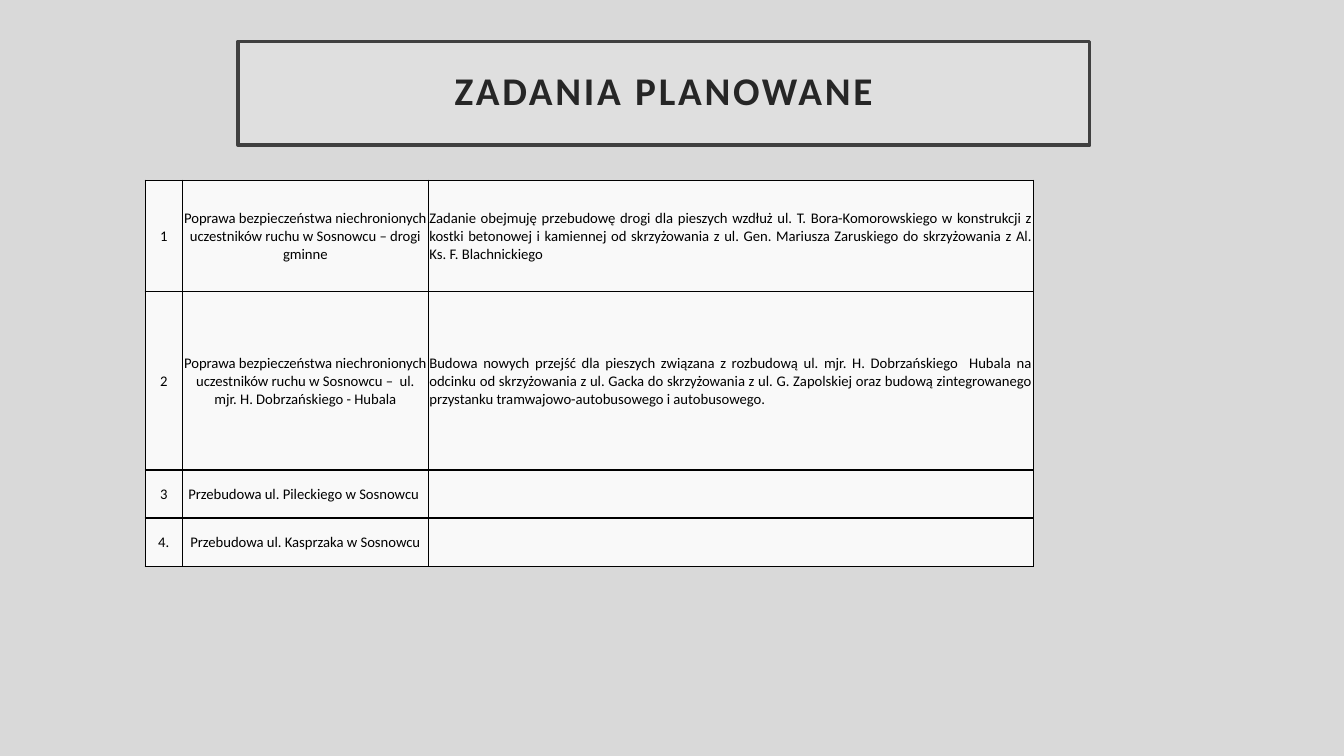
from lxml.etree import SubElement
from pptx import Presentation
from pptx.dml.color import RGBColor
from pptx.enum.text import MSO_ANCHOR as Anchor, MSO_AUTO_SIZE as AutoSize, PP_ALIGN as Align
from pptx.oxml.ns import qn
from pptx.util import Pt

TITLE = "ZADANIA PLANOWANE"
TASKS = [
    ("1", "Poprawa bezpieczeństwa niechronionych uczestników ruchu w Sosnowcu – drogi gminne",
     "Zadanie obejmuję przebudowę drogi dla pieszych wzdłuż ul. T. Bora-Komorowskiego "
     "w konstrukcji z kostki betonowej i kamiennej od skrzyżowania z ul. Gen. Mariusza "
     "Zaruskiego do skrzyżowania z Al. Ks. F. Blachnickiego "),
    ("2", "Poprawa bezpieczeństwa niechronionych uczestników ruchu w Sosnowcu –  ul. mjr. "
     "H. Dobrzańskiego - Hubala",
     "Budowa nowych przejść dla pieszych związana z rozbudową ul. mjr. H. Dobrzańskiego  "
     "Hubala na odcinku od skrzyżowania z ul. Gacka do skrzyżowania z ul. G. Zapolskiej "
     "oraz budową zintegrowanego przystanku tramwajowo-autobusowego i autobusowego."),
    ("3", "Przebudowa ul. Pileckiego w Sosnowcu ", ""),
    ("4.", "Przebudowa ul. Kasprzaka w Sosnowcu", ""),
]
COLUMN_WIDTHS = (26.6, 175.7, 432.1)
COLUMN_ALIGNS = (Align.CENTER, Align.CENTER, Align.JUSTIFY)
ROW_HEIGHTS = (79.5, 127.5, 34.3, 34.3)
TABLE_LEFT, TABLE_TOP = 103.7, 128.8

FONT = "Calibri"
BACKGROUND = RGBColor(0xD9, 0xD9, 0xD9)
TITLE_FILL = RGBColor(0xDF, 0xDF, 0xDF)
TITLE_LINE = RGBColor(0x40, 0x40, 0x40)
TITLE_TEXT = RGBColor(0x26, 0x26, 0x26)
CELL_FILL = RGBColor(0xF9, 0xF9, 0xF9)
BLACK = RGBColor(0, 0, 0)


def add_span(para, text, size, color):
    span = para.add_run()
    span.text = text
    span.font.name = FONT
    span.font.size = Pt(size)
    span.font.color.rgb = color
    return span


def add_borders(cell):
    properties = cell._tc.get_or_add_tcPr()
    for side in ("a:lnL", "a:lnR", "a:lnT", "a:lnB"):
        line = SubElement(properties, qn(side), w=str(Pt(1)))
        fill = SubElement(line, qn("a:solidFill"))
        SubElement(fill, qn("a:srgbClr"), val=str(BLACK))


def format_title(title):
    title.left, title.top, title.width, title.height = Pt(170), Pt(29.5), Pt(608.4), Pt(74.2)
    title.fill.solid()
    title.fill.fore_color.rgb = TITLE_FILL
    title.line.color.rgb = TITLE_LINE
    title.line.width = Pt(2.5)
    frame = title.text_frame
    frame.auto_size = AutoSize.NONE
    frame.word_wrap = True
    frame.vertical_anchor = Anchor.MIDDLE
    frame.margin_left = frame.margin_right = frame.margin_top = frame.margin_bottom = Pt(14.4)
    para = frame.paragraphs[0]
    para.alignment = Align.CENTER
    para.line_spacing = 0.9
    span = add_span(para, TITLE, 28, TITLE_TEXT)
    span.font.bold = True
    span.font._element.set("spc", "200")


def add_task_table(page):
    table = page.shapes.add_table(
        len(TASKS), len(COLUMN_WIDTHS), Pt(TABLE_LEFT), Pt(TABLE_TOP),
        Pt(sum(COLUMN_WIDTHS)), Pt(sum(ROW_HEIGHTS))).table
    table.first_row = table.horz_banding = False
    for column, width in zip(table.columns, COLUMN_WIDTHS):
        column.width = Pt(width)
    for row, height, task in zip(table.rows, ROW_HEIGHTS, TASKS):
        row.height = Pt(height)
        for cell, text, align in zip(row.cells, task, COLUMN_ALIGNS):
            add_borders(cell)
            cell.fill.solid()
            cell.fill.fore_color.rgb = CELL_FILL
            cell.vertical_anchor = Anchor.MIDDLE
            cell.margin_left = cell.margin_right = cell.margin_top = Pt(0.75)
            cell.margin_bottom = Pt(0)
            para = cell.text_frame.paragraphs[0]
            para.alignment = align
            if text:
                add_span(para, text, 10.5, BLACK)


def main():
    deck = Presentation()
    deck.slide_width, deck.slide_height = Pt(960), Pt(540)
    page = deck.slides.add_slide(deck.slide_layouts[5])
    page.background.fill.solid()
    page.background.fill.fore_color.rgb = BACKGROUND
    format_title(page.shapes.title)
    add_task_table(page)
    deck.save("out.pptx")


if __name__ == "__main__":
    main()
